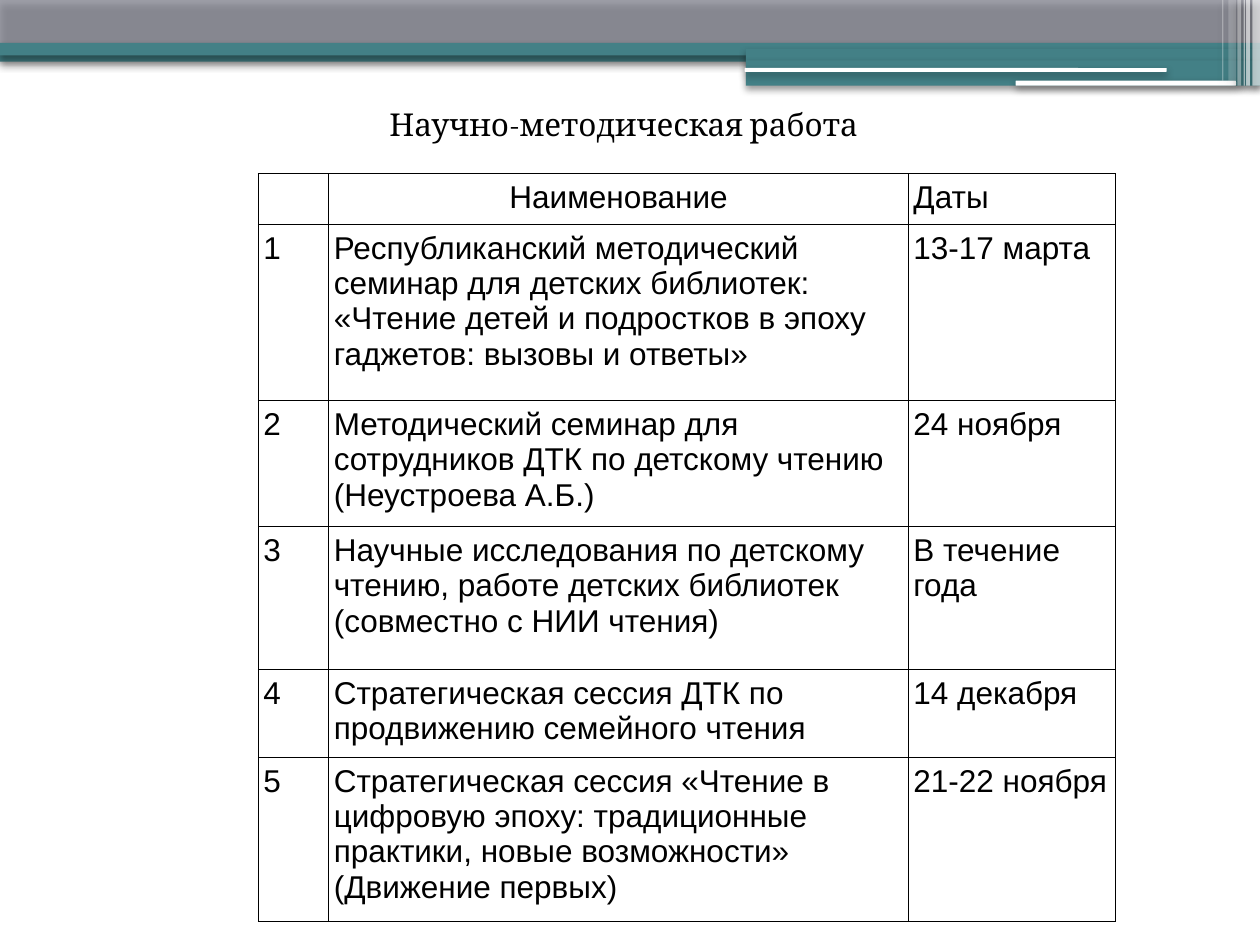
from lxml import etree
from pptx import Presentation
from pptx.dml.color import RGBColor
from pptx.enum import shapes, text
from pptx.oxml import ns
from pptx.util import Inches, Pt

TEAL = RGBColor(0x43, 0x80, 0x86)
SLATE = RGBColor(0x42, 0x44, 0x56)
WHITE = RGBColor(0xFF, 0xFF, 0xFF)
BLACK = RGBColor(0, 0, 0)

RECT = shapes.MSO_SHAPE.RECTANGLE
ROUND = shapes.MSO_SHAPE.ROUNDED_RECTANGLE

# left, top, width, height, shape, colour, opacity in percent
BANDS = [
    (0, 0.4, 10, 0.09, RECT, TEAL, 100),
    (0, 0, 10, 0.34, RECT, SLATE, 50),
    (0, 0.34, 10, 0.1, RECT, TEAL, 100),
    (5.92, 0.39, 4.08, 0.1, RECT, TEAL, 100),
    (5.92, 0.48, 4.08, 0.2, RECT, TEAL, 100),
    (5.91, 0.54, 3.35, 0.03, ROUND, WHITE, 100),
    (8.06, 0.64, 1.75, 0.04, ROUND, WHITE, 100),
]
# left, width, height, opacity in percent
STRIPES = [
    (9.94, 0.06, 0.68, 65), (9.89, 0.03, 0.68, 65), (9.87, 0.01, 0.68, 60),
    (9.82, 0.03, 0.68, 40), (9.75, 0.06, 0.64, 20), (9.7, 0.01, 0.64, 30),
]

COLS = [0.56, 4.6, 1.64]
ROW_HEIGHTS = [0.36, 1.4, 0.92, 1.13, 0.64, 1.2]
EVENTS = [
    ("Республиканский методический семинар для детских библиотек: "
     "«Чтение детей и подростков в эпоху гаджетов: вызовы и ответы»", "13-17 марта"),
    ("Методический семинар для сотрудников ДТК по детскому чтению "
     "(Неустроева А.Б.)", "24 ноября"),
    ("Научные исследования по детскому чтению, работе детских библиотек "
     "(совместно с НИИ чтения)", "В течение года"),
    ("Стратегическая сессия ДТК по продвижению семейного чтения", "14 декабря"),
    ("Стратегическая сессия «Чтение в цифровую эпоху: традиционные практики, "
     "новые возможности» (Движение первых)", "21-22 ноября"),
]


def add_node(parent, tag, **attrs):
    return etree.SubElement(parent, ns.qn(tag), {k: str(v) for k, v in attrs.items()})


def set_attrs(obj, **values):
    for name, value in values.items():
        setattr(obj, name, value)


def add_shadow(sp):
    sp.shadow.inherit = False
    effects = sp._element.spPr.find(ns.qn("a:effectLst"))
    shadow = add_node(effects, "a:outerShdw", blurRad=Pt(4.1), dist=Pt(2),
                      dir=90 * 60000, algn="t", rotWithShape=0)
    add_node(add_node(shadow, "a:srgbClr", val=BLACK), "a:alpha", val=40000)


def add_bar(s, left, top, width, height, kind, color, opacity):
    sp = s.shapes.add_shape(kind, Inches(left), Inches(top), Inches(width), Inches(height))
    sp.fill.solid()
    sp.fill.fore_color.rgb = color
    if opacity < 100:
        clr = sp._element.spPr.find(ns.qn("a:solidFill"))[0]
        add_node(clr, "a:alpha", val=opacity * 1000)
    sp.line.fill.background()
    add_shadow(sp)


def add_header(s, left, top):
    for x, y, *rest in BANDS:
        add_bar(s, left + x, top + y, *rest)
    for x, width, height, opacity in STRIPES:
        add_bar(s, left + x, top, width, height, RECT, WHITE, opacity)


def write(tf, words, font, align):
    p = tf.paragraphs[0]
    p.alignment = align
    r = p.add_run()
    r.text = words
    set_attrs(r.font, name=font, size=Pt(18))
    r.font.color.rgb = BLACK


def add_title(s, left, top, width, height):
    box = s.shapes.add_textbox(Inches(left), Inches(top), Inches(width), Inches(height))
    tf = box.text_frame
    set_attrs(tf, word_wrap=True, vertical_anchor=text.MSO_ANCHOR.MIDDLE,
              margin_left=0, margin_right=0, margin_top=0, margin_bottom=0)
    write(tf, "Научно-методическая работа", "Cambria", text.PP_ALIGN.CENTER)


def add_borders(cell):
    tc_pr = cell._tc.get_or_add_tcPr()
    for i, side in enumerate("LRTB"):
        ln = add_node(tc_pr, f"a:ln{side}", w=Pt(0.57))
        add_node(add_node(ln, "a:solidFill"), "a:srgbClr", val=BLACK)
        tc_pr.insert(i, ln)  # borders come before the cell fill


def add_schedule(s, left, top):
    rows = [("", "Наименование", "Даты")]
    rows += [(str(n), *event) for n, event in enumerate(EVENTS, 1)]
    frame = s.shapes.add_table(len(rows), len(COLS), Inches(left), Inches(top),
                               Inches(sum(COLS)), Inches(sum(ROW_HEIGHTS)))
    table = frame.table
    set_attrs(table, first_row=False, horz_banding=False)
    for col, width in zip(table.columns, COLS):
        col.width = Inches(width)
    for i, (row, height) in enumerate(zip(table.rows, ROW_HEIGHTS)):
        row.height = Inches(height)
        for j, cell in enumerate(row.cells):
            set_attrs(cell, margin_left=Inches(0.04), margin_right=Inches(0.04),
                      margin_top=Inches(0.05), margin_bottom=Inches(0.05))
            cell.fill.background()
            add_borders(cell)
            if rows[i][j]:
                centred = (i, j) == (0, 1)
                write(cell.text_frame, rows[i][j], "Arial",
                      text.PP_ALIGN.CENTER if centred else text.PP_ALIGN.LEFT)


def main():
    prs = Presentation()
    set_attrs(prs, slide_width=Inches(10), slide_height=Inches(7.5))
    s = prs.slides.add_slide(prs.slide_layouts[6])
    add_header(s, 0, 0)
    add_title(s, 0.45, 0.59, 9, 0.79)
    add_schedule(s, 2.05, 1.38)
    prs.save("out.pptx")


if __name__ == "__main__":
    main()
